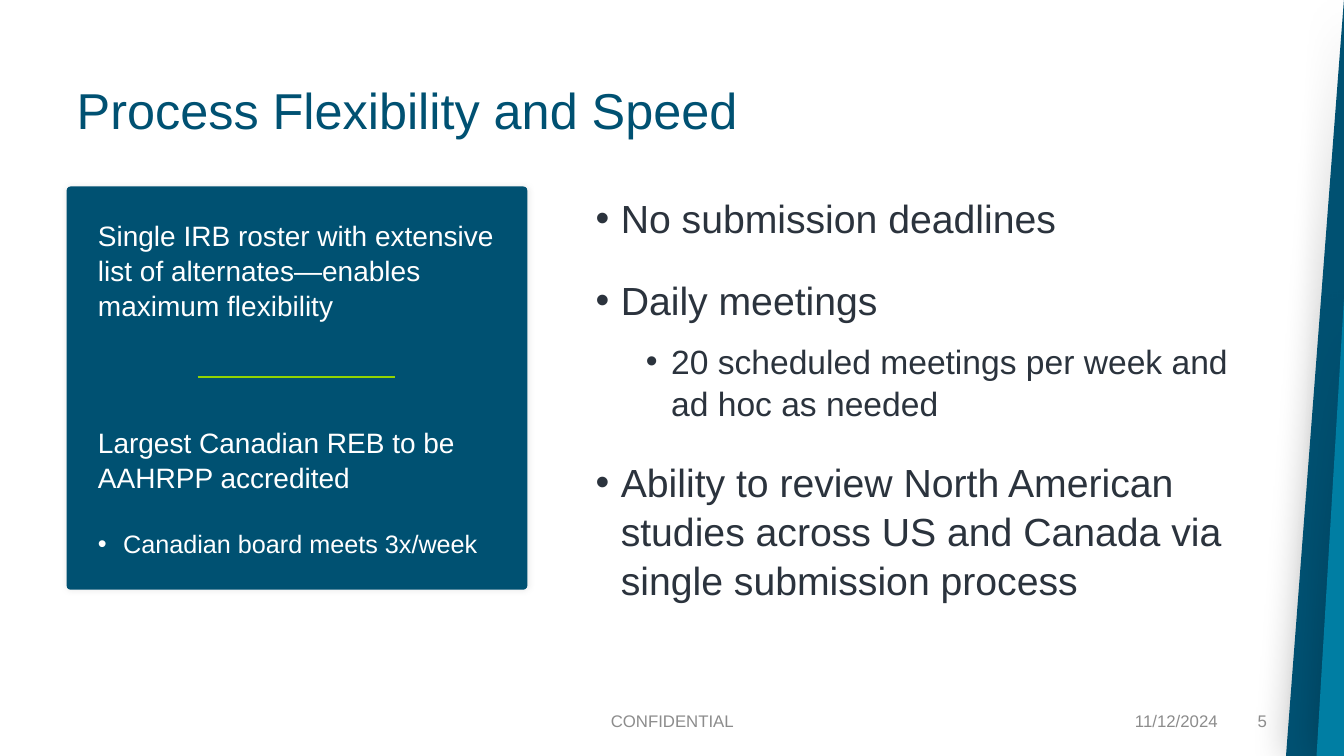
from dataclasses import dataclass

from lxml.etree import SubElement
from pptx import Presentation
from pptx.dml.color import RGBColor
from pptx.enum.shapes import MSO_CONNECTOR, MSO_SHAPE
from pptx.enum.text import MSO_ANCHOR, PP_ALIGN
from pptx.oxml.ns import qn
from pptx.util import Cm, Pt

COLORS = {"navy": "005172", "teal": "007EA3", "lime": "92D400", "ink": "2B333D",
          "gray": "8C8C8C", "white": "FFFFFF", "black": "000000"}
FONT = "Arial"
HANG = 0.635  # cm between bullet and text


@dataclass
class Box:
    left: float
    top: float
    width: float
    height: float

    def lengths(self) -> tuple:
        return Cm(self.left), Cm(self.top), Cm(self.width), Cm(self.height)


@dataclass
class Para:
    text: str
    size: float
    before: float = 0
    after: float = 6
    margin: float = 0
    bullet: bool = False


@dataclass
class Footer:
    text: str
    left: float
    width: float
    align: PP_ALIGN


@dataclass
class Triangle:
    box: Box
    color: str


TITLE_BOX = Box(1.68, 1.02, 30.51, 3.68)
BODY_BOX = Box(14.76, 4.72, 17.42, 12.09)
CARD_BOX = Box(1.68, 4.7, 11.61, 10.16)

TRIANGLES = [
    Triangle(Box(32.41, 0, 1.46, 19.05), "navy"),
    Triangle(Box(33.18, 7.54, 0.69, 11.51), "teal"),
]
BODY = [
    Para("No submission deadlines", 28, margin=HANG, bullet=True),
    Para("Daily meetings", 28, 18, margin=HANG, bullet=True),
    Para("20 scheduled meetings per week and ad hoc as needed", 24, 5,
         margin=3 * HANG, bullet=True),
    Para("Ability to review North American studies across US and Canada via "
         "single submission process", 28, 18, margin=HANG, bullet=True),
]
CARD = [
    Para("Single IRB roster with extensive list of alternates—enables maximum flexibility", 20),
    Para("Largest Canadian REB to be AAHRPP accredited", 20, 66.5),
    Para("Canadian board meets 3x/week", 18, 18, margin=HANG, bullet=True),
]
FOOTERS = [
    Footer("CONFIDENTIAL", 11.23, 11.43, PP_ALIGN.CENTER),
    Footer("11/12/2024", 26.52, 4.42, PP_ALIGN.RIGHT),
    Footer("5", 30.94, 1.24, PP_ALIGN.RIGHT),
]


def rgb(name: str) -> RGBColor:
    return RGBColor.from_string(COLORS[name])


def add_run(p, text: str, size: float, color: str) -> None:
    r = p.add_run()
    r.text = text
    r.font.name = FONT
    r.font.size = Pt(size)
    r.font.color.rgb = rgb(color)


def set_bullet(p, margin: float) -> None:
    pPr = p._p.get_or_add_pPr()
    pPr.set("marL", str(Cm(margin)))
    pPr.set("indent", str(-Cm(HANG)))
    SubElement(pPr, qn("a:buFont"), typeface=FONT)
    SubElement(pPr, qn("a:buChar"), char="•")


def fill_text(tf, paras: list[Para], color: str) -> None:
    tf.word_wrap = True
    for i, para in enumerate(paras):
        p = tf.add_paragraph() if i else tf.paragraphs[0]
        p.alignment = PP_ALIGN.LEFT
        if para.bullet:
            set_bullet(p, para.margin)
        p.line_spacing = 1.04
        p.space_before = Pt(para.before)
        p.space_after = Pt(para.after)
        add_run(p, para.text, para.size, color)


def add_glow_shape(slide, kind: MSO_SHAPE, box: Box, color: str, alpha: int, blur: float):
    """Add a borderless filled shape with a soft black shadow all round."""
    sp = slide.shapes.add_shape(kind, *box.lengths())
    sp.fill.solid()
    sp.fill.fore_color.rgb = rgb(color)
    sp.line.fill.background()
    sp.shadow.inherit = False
    effects = sp._element.spPr.find(qn("a:effectLst"))
    shadow = SubElement(effects, qn("a:outerShdw"), blurRad=str(Pt(blur)), dist="0",
                        dir="0", algn="ctr", rotWithShape="0")
    clr = SubElement(shadow, qn("a:srgbClr"), val=COLORS["black"])
    SubElement(clr, qn("a:alpha"), val=str(alpha * 1000))
    return sp


def add_title(slide) -> None:
    title = slide.shapes.title
    title.left, title.top, title.width, title.height = TITLE_BOX.lengths()
    tf = title.text_frame
    tf.vertical_anchor = MSO_ANCHOR.MIDDLE
    p = tf.paragraphs[0]
    p.alignment = PP_ALIGN.LEFT
    p.line_spacing = 0.9
    add_run(p, "Process Flexibility and Speed", 36, "navy")


def add_card(slide) -> None:
    card = add_glow_shape(slide, MSO_SHAPE.ROUNDED_RECTANGLE, CARD_BOX, "navy", 10, 5)
    card.adjustments[0] = 0.01
    tf = card.text_frame
    tf.vertical_anchor = MSO_ANCHOR.MIDDLE
    tf.margin_left = tf.margin_right = Cm(0.76)
    fill_text(tf, CARD, "white")

    rule = slide.shapes.add_connector(MSO_CONNECTOR.STRAIGHT, Cm(4.98), Cm(9.5),
                                      Cm(9.96), Cm(9.5))
    rule.line.color.rgb = rgb("lime")
    rule.line.width = Pt(1.5)
    SubElement(rule._element.spPr, qn("a:effectLst"))


def add_footer(slide, footer: Footer) -> None:
    box = Box(footer.left, 17.65, footer.width, 1.02)
    tf = slide.shapes.add_textbox(*box.lengths()).text_frame
    tf.word_wrap = True
    tf.vertical_anchor = MSO_ANCHOR.MIDDLE
    p = tf.paragraphs[0]
    p.alignment = footer.align
    add_run(p, footer.text, 12, "gray")


def main() -> None:
    prs = Presentation()
    prs.slide_width, prs.slide_height = Cm(33.87), Cm(19.05)
    slide = prs.slides.add_slide(prs.slide_layouts[5])
    for tri in TRIANGLES:
        sp = add_glow_shape(slide, MSO_SHAPE.RIGHT_TRIANGLE, tri.box, tri.color, 25, 25)
        sp._element.spPr.find(qn("a:xfrm")).set("flipH", "1")
    add_title(slide)
    body = slide.shapes.add_textbox(*BODY_BOX.lengths())
    fill_text(body.text_frame, BODY, "ink")
    for footer in FOOTERS:
        add_footer(slide, footer)
    add_card(slide)
    prs.save("out.pptx")


if __name__ == "__main__":
    main()
